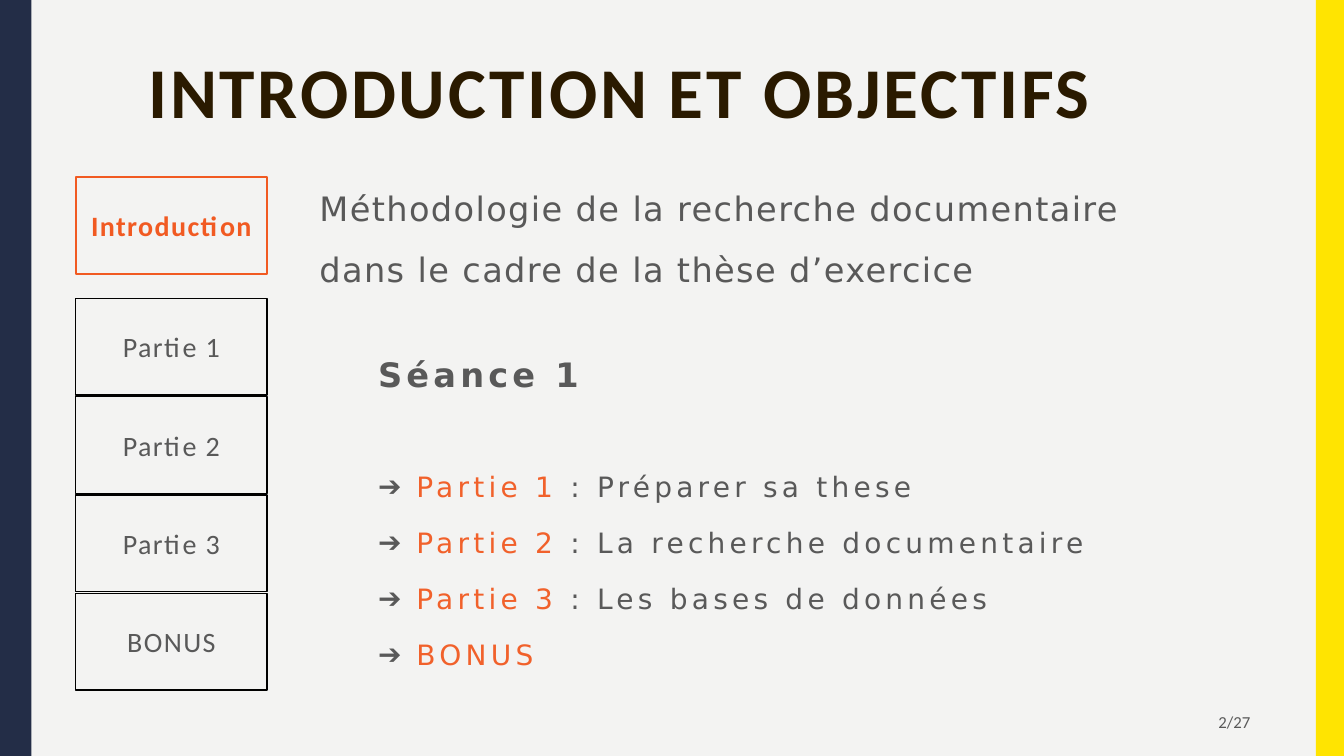
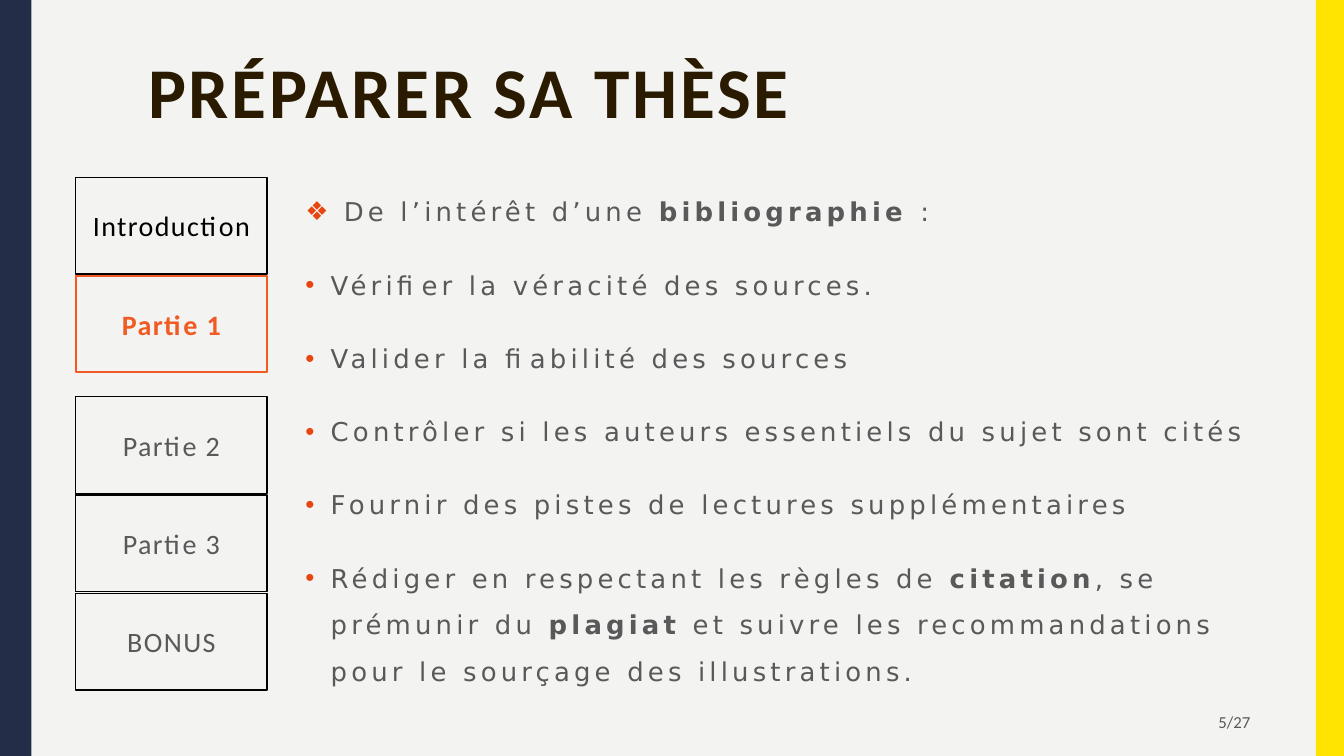
from lxml import etree
from pptx import Presentation
from pptx.dml.color import RGBColor
from pptx.enum.shapes import MSO_SHAPE
from pptx.enum.text import MSO_ANCHOR, MSO_AUTO_SIZE, PP_ALIGN
from pptx.oxml.ns import qn
from pptx.util import Inches, Pt

RECT = MSO_SHAPE.RECTANGLE
TOP, MIDDLE = MSO_ANCHOR.TOP, MSO_ANCHOR.MIDDLE
FIXED = MSO_AUTO_SIZE.NONE
LEFT, CENTER, RIGHT = PP_ALIGN.LEFT, PP_ALIGN.CENTER, PP_ALIGN.RIGHT

PAPER, NAVY, YELLOW, BROWN = "F3F3F2", "232D47", "FFE401", "2A1A00"
BLACK, GREY, ORANGE, CORAL, RED = "000000", "595959", "F15A22", "F1612B", "E74610"
SANS, WIDE = "Calibri", "DejaVu Sans"

deck = Presentation()
deck.slide_width, deck.slide_height = Inches(13.33), Inches(7.5)


def area(x, y, w, h):
    """Turn percentages of the slide into a left, top, width, height box."""
    wide, high = deck.slide_width / 100, deck.slide_height / 100
    return int(x * wide), int(y * high), int(w * wide), int(h * high)


def write(shape, paras, box=None, size=20, color=GREY, font=SANS, bold=False,
          track=0, align=LEFT, anchor=TOP, lines=1.0, inset=0.1):
    """Each paragraph is a dict: runs, plus bullet, tint, hang, after, size."""
    if box:
        shape.left, shape.top, shape.width, shape.height = area(*box)
    frame = shape.text_frame
    frame.word_wrap, frame.auto_size = True, FIXED
    frame.vertical_anchor = anchor
    frame.margin_left = frame.margin_right = Inches(inset)
    for i, item in enumerate(paras):
        para = frame.add_paragraph() if i else frame.paragraphs[0]
        props = para._p.get_or_add_pPr()
        hang = Inches(item.get("hang", 0))
        props.set("marL", str(hang))
        props.set("indent", str(-hang))
        if "bullet" in item:
            tint = etree.SubElement(props, qn("a:buClr"))
            etree.SubElement(tint, qn("a:srgbClr"), val=item["tint"])
            etree.SubElement(props, qn("a:buChar"), char=item["bullet"])
        else:
            etree.SubElement(props, qn("a:buNone"))
        para.alignment, para.line_spacing = align, lines
        para.space_before, para.space_after = Pt(0), Pt(item.get("after", 0))
        for text, look in item["runs"]:
            run = para.add_run()
            run.text = text
            run.font.name = font
            run.font.size = Pt(item.get("size", size))
            run.font.bold = look.get("bold", bold)
            run.font.color.rgb = RGBColor.from_string(look.get("color", color))
            run._r.get_or_add_rPr().set("spc", str(track * 100))


# Shared content
bands = [(0, 2.33, NAVY), (97.9, 2.1, YELLOW)]
steps = ["Introduction", "Partie 1", "Partie 2", "Partie 3", "BONUS"]
pages = [("INTRODUCTION ET OBJECTIFS", "2/27"), ("PRÉPARER SA THÈSE", "5/27")]
strong, accent = {"bold": True}, {"color": CORAL}

back = deck.slide_master.background.fill
back.solid()
back.fore_color.rgb = RGBColor.from_string(PAPER)

# Frame of every slide: bands, title, step boxes, page number
bodies = []
for now, (title, number) in enumerate(pages):
    slide = deck.slides.add_slide(deck.slide_layouts[1])
    bodies.append(slide.placeholders[1])
    for x, w, color in bands:
        band = slide.shapes.add_shape(RECT, *area(x, 0, w, 100))
        band.shadow.inherit = False
        band.fill.solid()
        band.fill.fore_color.rgb = RGBColor.from_string(color)
        band.line.fill.background()

    write(slide.shapes.title, [{"runs": [(title, {})]}], (10.28, 5.6, 83.5, 21.73),
          size=51, color=BROWN, bold=True, track=2)

    for i, step in enumerate(steps):
        live = i == now
        y = 23.47 + 13 * i + (3 if i > now else 0)
        tile = slide.shapes.add_shape(RECT, *area(5.63, y, 14.25, 12.8))
        tile.shadow.inherit = False
        tile.fill.background()
        tile.line.color.rgb = RGBColor.from_string(ORANGE if live else BLACK)
        tile.line.width = Pt(1.5 if live else 1)
        color = ORANGE if live else BLACK if i < now else GREY
        write(tile, [{"runs": [(step, {})]}], color=color, bold=live, track=1,
              align=CENTER, anchor=MIDDLE, inset=0)

    foot = slide.shapes.add_textbox(*area(70.67, 92.93, 23.1, 5.07))
    write(foot, [{"runs": [(number, {})]}], size=12, align=RIGHT, anchor=MIDDLE)

# Introduction: subject and outline
lead = deck.slides[0].shapes.add_textbox(*area(23.03, 21.6, 61.14, 16.4))
topic = "Méthodologie de la recherche documentaire dans le cadre de la thèse d’exercice"
write(lead, [{"runs": [(topic, {})]}], size=24, font=WIDE, track=1, lines=1.5)

parts = [("Partie 1 ", ": Préparer sa these"),
         ("Partie 2 ", ": La recherche documentaire"),
         ("Partie 3 ", ": Les bases de données"),
         ("BONUS", "")]
plan = [{"runs": [("Séance 1", strong)], "size": 24, "after": 42}]
for name, topic in parts:
    runs = [(name, accent)] + ([(topic, {})] if topic else [])
    plan.append({"runs": runs, "bullet": "➔", "tint": GREY, "hang": 0.38, "after": 4})
write(bodies[0], plan, (27.38, 43.47, 61.14, 45.73), font=WIDE, track=3, lines=1.5)

# Part 1: reasons for a bibliography
points = [
    [("De l’intérêt d’une ", {}), ("bibliographie ", strong), (":", {})],
    [("Vérifier la véracité des sources.", {})],
    [("Valider la fiabilité des sources", {})],
    [("Contrôler si les auteurs essentiels du sujet sont cités", {})],
    [("Fournir des pistes de lectures supplémentaires", {})],
    [("Rédiger en respectant les règles de ", {}), ("citation", strong),
     (", se prémunir du ", {}), ("plagiat", strong),
     (" et suivre les recommandations pour le sourçage des illustrations.", {})],
]
items = [{"runs": runs, "bullet": "•" if i else "❖", "tint": RED,
          "hang": 0.25 if i else 0.38, "after": 19} for i, runs in enumerate(points)]
write(bodies[1], items, (21.98, 23.2, 74.27, 70.53), size=18.5, font=WIDE,
      track=3, lines=1.5)

deck.save("out.pptx")
